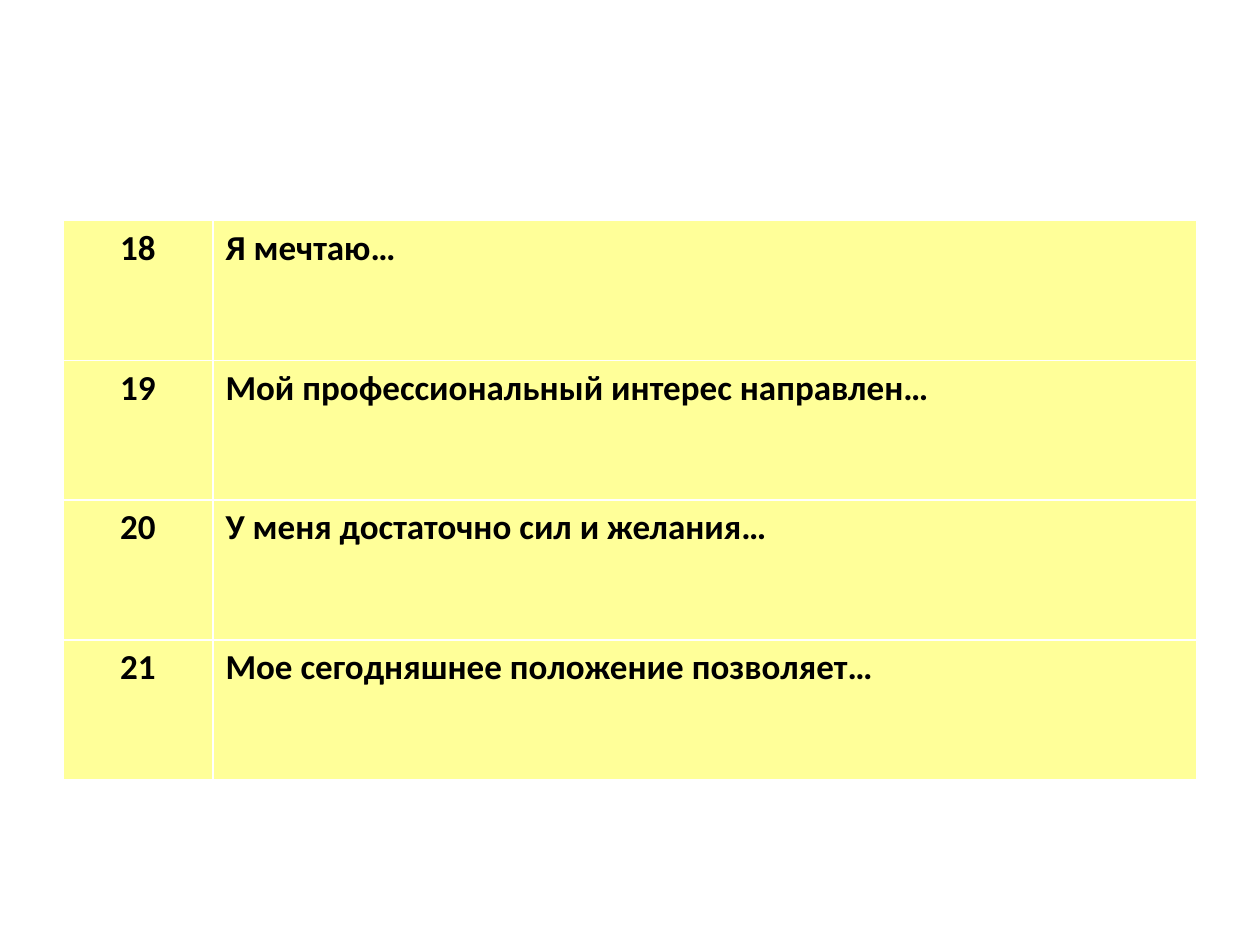
"""Builds a slide with a table of numbered unfinished sentences."""
from pptx import Presentation
from pptx.dml.color import RGBColor
from pptx.enum.text import PP_ALIGN
from pptx.util import Inches, Pt

YELLOW = RGBColor(0xFF, 0xFF, 0x99)
BLACK = RGBColor(0, 0, 0)
FIRST_NUMBER = 18
SENTENCES = [
    "Я мечтаю…",
    "Мой профессиональный интерес направлен…",
    "У меня достаточно сил и желания…",
    "Мое сегодняшнее положение позволяет…",
]


class SlideBuilder:
    """Holds the text style and the current slide."""

    def __init__(self, slide, font_name="Calibri", font_size=20):
        self.slide = slide
        self.font_name = font_name
        self.font_size = Pt(font_size)

    def fill_cell(self, cell, text, alignment):
        """Writes styled text into a filled cell."""
        cell.fill.solid()
        cell.fill.fore_color.rgb = YELLOW
        cell.text = text
        paragraph = cell.text_frame.paragraphs[0]
        paragraph.alignment = alignment
        font = paragraph.font
        font.name = self.font_name
        font.size = self.font_size
        font.bold = True
        font.color.rgb = BLACK

    def add_table(self, rows, left, top, column_widths, row_height, alignments):
        """Adds a table with equal row heights."""
        table = self.slide.shapes.add_table(
            len(rows), len(column_widths), Inches(left), Inches(top),
            Inches(sum(column_widths)), Inches(row_height * len(rows)),
        ).table
        for column, width in zip(table.columns, column_widths):
            column.width = Inches(width)
        for row, texts in zip(table.rows, rows):
            for cell, text, alignment in zip(row.cells, texts, alignments):
                self.fill_cell(cell, text, alignment)


def main():
    """Builds and saves the presentation."""
    presentation = Presentation()
    presentation.slide_width = Inches(10)
    presentation.slide_height = Inches(7.5)
    builder = SlideBuilder(
        presentation.slides.add_slide(presentation.slide_layouts[6]))
    numbered_sentences = [
        (str(number), sentence)
        for number, sentence in enumerate(SENTENCES, FIRST_NUMBER)
    ]
    builder.add_table(
        numbered_sentences, 0.5, 1.75, [1.19, 7.81], 1.11,
        [PP_ALIGN.CENTER, PP_ALIGN.JUSTIFY])
    presentation.save("out.pptx")


if __name__ == "__main__":
    main()
